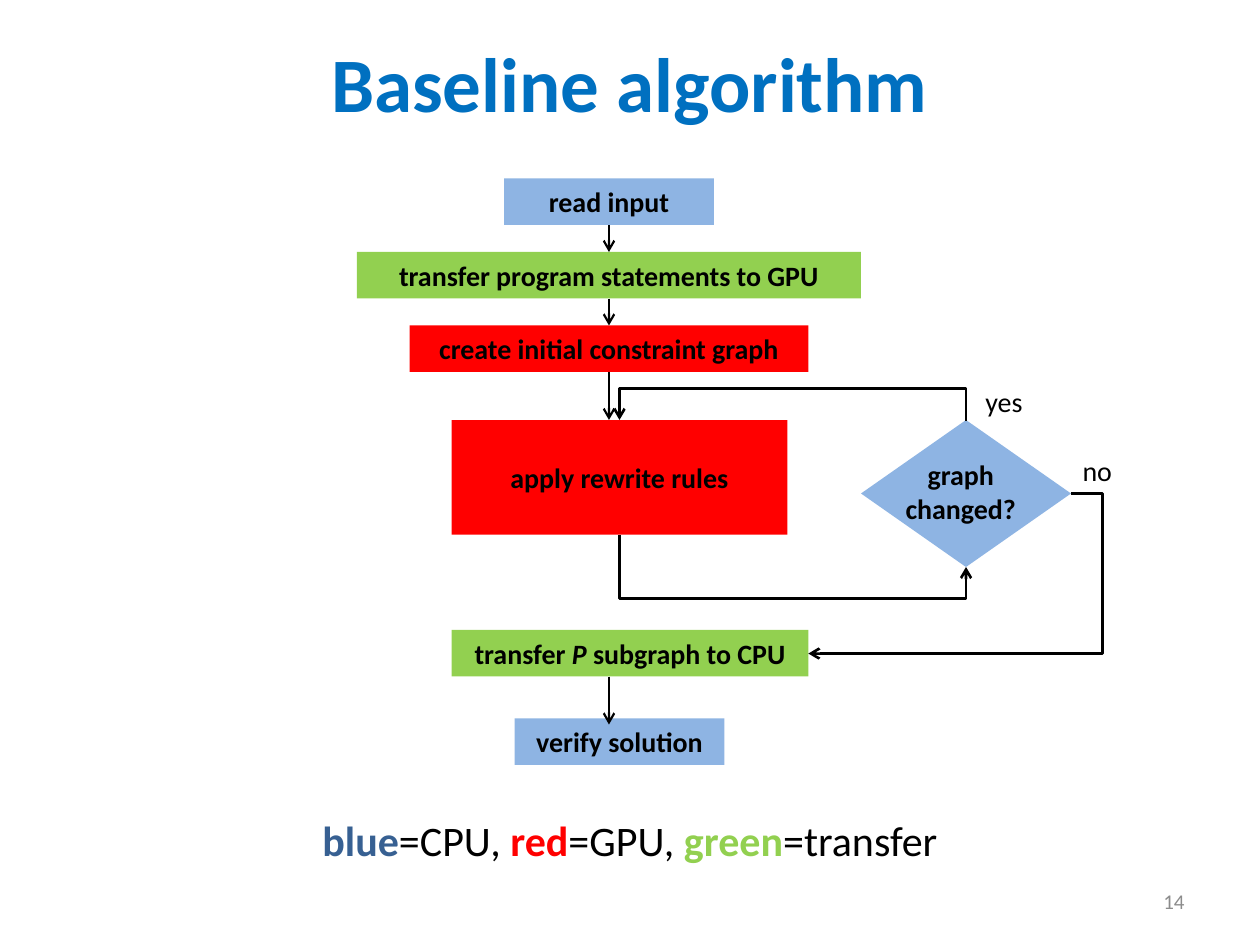
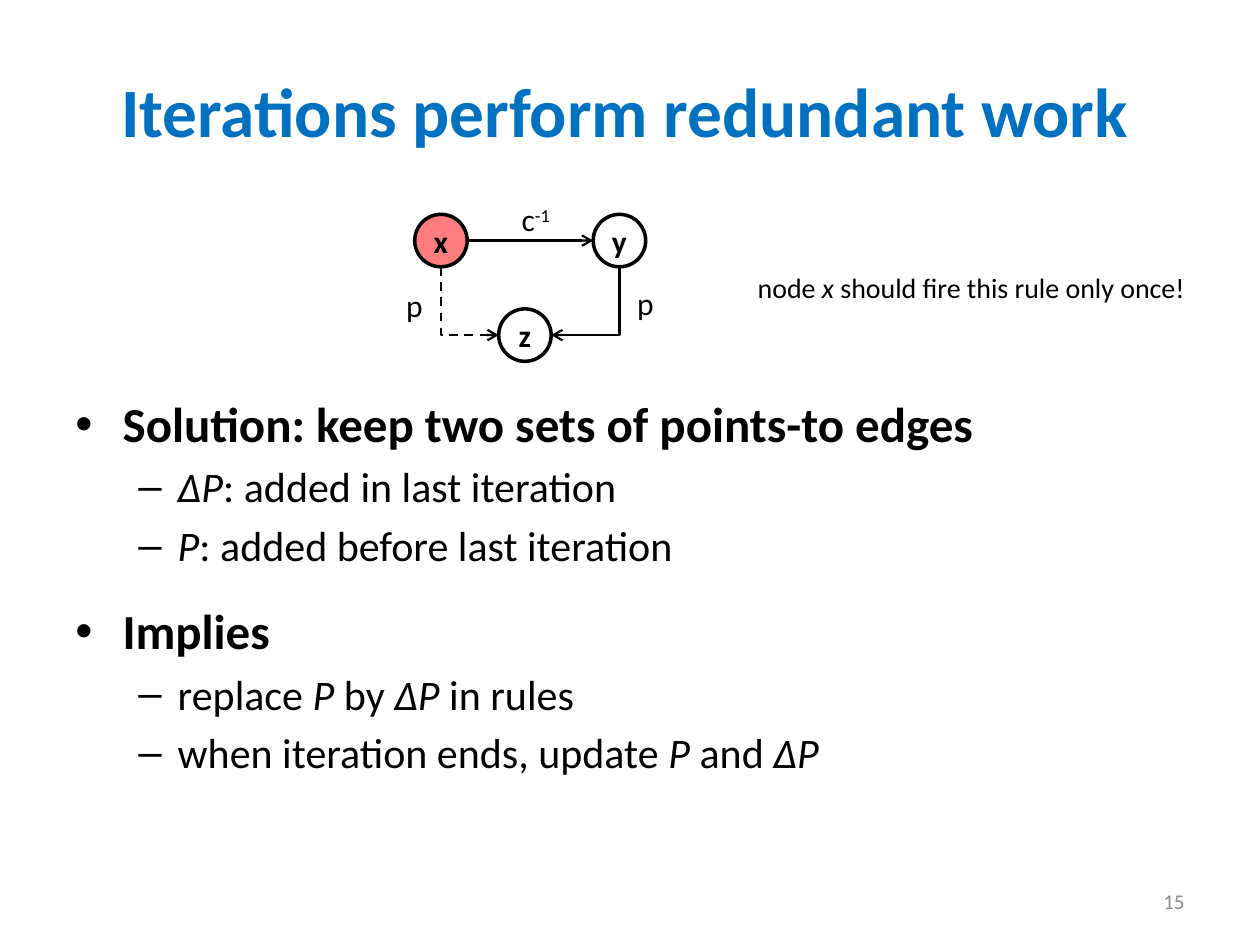
from pptx import Presentation
from pptx.dml.color import RGBColor
from pptx.enum.dml import MSO_LINE
from pptx.enum.shapes import MSO_CONNECTOR, MSO_SHAPE
from pptx.enum.text import MSO_ANCHOR, PP_ALIGN
from pptx.oxml.ns import qn
from pptx.oxml.xmlchemy import OxmlElement
from pptx.util import Pt

BLACK = RGBColor(0x00, 0x00, 0x00)
WHITE = RGBColor(0xFF, 0xFF, 0xFF)
GRAY = RGBColor(0x8C, 0x8C, 0x8C)
TITLE_BLUE = RGBColor(0x00, 0x70, 0xC0)
DARK_BLUE = RGBColor(0x37, 0x60, 0x92)
CPU_BLUE = RGBColor(0x8E, 0xB4, 0xE3)
GPU_RED = RGBColor(0xFF, 0x00, 0x00)
TRANSFER_GREEN = RGBColor(0x92, 0xD0, 0x50)

FONT = "Calibri"
TITLE_ONLY = 5
TOP, LEFT, BOTTOM, RIGHT = range(4)
BOLD = {"bold": True}
ITALIC = {"italic": True}
STEP_HEIGHT = 26.6
NODE_SIZE = 30
HALF_OPAQUE = 51


def add_child(parent, tag, **attributes):
    child = OxmlElement(tag)
    for name, value in attributes.items():
        child.set(name, value)
    parent.append(child)
    return child


class DeckBuilder:
    def __init__(self):
        self.deck = Presentation()
        self.deck.slide_width = Pt(720)
        self.deck.slide_height = Pt(540)
        self.page = None

    def start_page(self, title, number, left, top, size, anchor):
        self.page = self.deck.slides.add_slide(self.deck.slide_layouts[TITLE_ONLY])
        heading = self.page.shapes.title
        place = {"left": left, "top": top, "width": 648, "height": 90}
        for name, value in place.items():
            setattr(heading, name, Pt(value))
        frame = heading.text_frame
        self.set_frame(frame, anchor, margin_top=0, margin_bottom=0)
        self.add_spans(frame.paragraphs[0], [(title, BOLD)], size, TITLE_BLUE, PP_ALIGN.CENTER)
        self.text(516, 500.5, 168, 28.8, [str(number)], 12, GRAY,
                  PP_ALIGN.RIGHT, MSO_ANCHOR.MIDDLE)

    def set_frame(self, frame, anchor, **margins):
        frame.word_wrap = True
        frame.vertical_anchor = anchor
        for name, value in margins.items():
            setattr(frame, name, Pt(value))

    def add_spans(self, para, spans, size, color=BLACK, align=PP_ALIGN.LEFT):
        para.alignment = align
        for item in spans:
            words, changes = (item, {}) if isinstance(item, str) else item
            formats = {"name": FONT, "size": Pt(size), "bold": False, "italic": False, **changes}
            span = para.add_run()
            span.text = words
            span.font.color.rgb = formats.pop("color", color)
            raised = formats.pop("raised", None)
            for name, value in formats.items():
                setattr(span.font, name, value)
            if raised:
                span._r.get_or_add_rPr().set("baseline", str(raised * 1000))

    def text(self, left, top, width, height, spans, size, color=BLACK,
             align=PP_ALIGN.LEFT, anchor=MSO_ANCHOR.TOP):
        box = self.page.shapes.add_textbox(Pt(left), Pt(top), Pt(width), Pt(height))
        self.set_frame(box.text_frame, anchor)
        self.add_spans(box.text_frame.paragraphs[0], spans, size, color, align)
        return box

    def shape(self, kind, left, top, width, height, fill):
        shape = self.page.shapes.add_shape(kind, Pt(left), Pt(top), Pt(width), Pt(height))
        shape.shadow.inherit = False
        shape.fill.solid()
        shape.fill.fore_color.rgb = fill
        shape.line.fill.background()
        return shape

    def step(self, left, top, width, fill, spans, height=STEP_HEIGHT):
        box = self.shape(MSO_SHAPE.RECTANGLE, left, top, width, height, fill)
        self.set_frame(box.text_frame, MSO_ANCHOR.MIDDLE)
        self.add_spans(box.text_frame.paragraphs[0], spans, 16, align=PP_ALIGN.CENTER)
        return box

    def node(self, left, top, label, fill, opacity=100):
        circle = self.shape(MSO_SHAPE.OVAL, left, top, NODE_SIZE, NODE_SIZE, fill)
        circle.line.color.rgb = BLACK
        circle.line.width = Pt(2)
        if opacity < 100:
            color = circle._element.spPr.find(qn("a:solidFill"))[0]
            add_child(color, "a:alpha", val=str(opacity * 1000))
        self.set_frame(circle.text_frame, MSO_ANCHOR.MIDDLE, margin_left=0,
                       margin_right=0, margin_top=0, margin_bottom=0)
        self.add_spans(circle.text_frame.paragraphs[0], [(label, BOLD)], 18,
                       align=PP_ALIGN.CENTER)

    def arrow(self, start, end, width=1.25, kind=MSO_CONNECTOR.STRAIGHT):
        arrow = self.page.shapes.add_connector(kind, *(Pt(value) for value in (*start, *end)))
        arrow.line.color.rgb = BLACK
        arrow.line.width = Pt(width)
        add_child(arrow.line._get_or_add_ln(), "a:tailEnd", type="arrow")
        add_child(arrow._element.spPr, "a:effectLst")
        return arrow

    def elbow(self, start, end, turn=None, vertical=True, width=1.25):
        axis = 1 if vertical else 0
        frame_start, frame_end = start, end
        quarter = 1 if end[1] > start[1] and end[0] < start[0] else -1
        if vertical:
            middle_x, middle_y = ((a + b) / 2 for a, b in zip(start, end))
            frame_start, frame_end = (
                (middle_x + quarter * (y - middle_y), middle_y - quarter * (x - middle_x))
                for x, y in (start, end))
        arrow = self.arrow(frame_start, frame_end, width, MSO_CONNECTOR.ELBOW)
        properties = arrow._element.spPr
        if vertical:
            properties.find(qn("a:xfrm")).set("rot", str(quarter % 4 * 5400000))
        geometry = properties.find(qn("a:prstGeom"))
        if turn is None:
            geometry.set("prst", "bentConnector2")
        else:
            share = (turn - start[axis]) / (end[axis] - start[axis])
            guides = geometry.find(qn("a:avLst"))
            add_child(guides, "a:gd", name="adj1", fmla=f"val {round(share * 100000)}")
        return arrow

    def bullets(self, left, top, width, height, margin_top, entries):
        box = self.page.shapes.add_textbox(Pt(left), Pt(top), Pt(width), Pt(height))
        frame = box.text_frame
        self.set_frame(frame, MSO_ANCHOR.TOP, margin_top=margin_top)
        levels = [(28, 27, 27, "•"), (24, 58.5, 22.5, "–")]
        for index, (level, space_after, spans) in enumerate(entries):
            size, indent, hanging, mark = levels[level]
            para = frame.add_paragraph() if index else frame.paragraphs[0]
            self.add_spans(para, spans, size)
            formats = {"level": level, "space_before": Pt(size / 5), "space_after": Pt(space_after)}
            for name, value in formats.items():
                setattr(para, name, value)
            properties = para._p.get_or_add_pPr()
            properties.set("marL", str(Pt(indent)))
            properties.set("indent", str(-Pt(hanging)))
            add_child(properties, "a:buFont", typeface="Arial")
            add_child(properties, "a:buChar", char=mark)


def build_algorithm_page(builder):
    builder.start_page("Baseline algorithm", 14, 36, 1.5, 44, MSO_ANCHOR.MIDDLE)
    legend = [("blue", {"bold": True, "color": DARK_BLUE}), "=CPU, ",
              ("red", {"bold": True, "color": GPU_RED}), "=GPU, ",
              ("green", {"bold": True, "color": TRANSFER_GREEN}), "=transfer"]
    builder.text(36, 462, 648, 37.5, legend, 24, align=PP_ALIGN.CENTER)

    read = builder.step(288, 102, 120, CPU_BLUE, [("read input", BOLD)])
    send = builder.step(204, 144, 288, TRANSFER_GREEN,
                        [("transfer program statements to GPU", BOLD)])
    create = builder.step(234, 186, 228, GPU_RED, [("create initial constraint graph", BOLD)])
    builder.step(258, 240, 192, GPU_RED, [("apply rewrite rules", BOLD)], 65.5)
    builder.step(258, 360, 204, TRANSFER_GREEN,
                 [("transfer ", BOLD), ("P ", {**BOLD, **ITALIC}), ("subgraph to CPU", BOLD)])
    builder.step(294, 410.5, 120, CPU_BLUE, [("verify solution", BOLD)])
    builder.shape(MSO_SHAPE.FLOWCHART_DECISION, 492, 240, 120, 84, CPU_BLUE)
    builder.text(510, 258, 78, 46, [("graph changed?", BOLD)], 16, align=PP_ALIGN.CENTER)

    for upper, lower in ((read, send), (send, create)):
        arrow = builder.arrow((348, upper.top.pt + STEP_HEIGHT), (348, lower.top.pt))
        arrow.begin_connect(upper, BOTTOM)
        arrow.end_connect(lower, TOP)
    builder.arrow((348, 212.6), (348, 240)).begin_connect(create, BOTTOM)
    builder.arrow((348, 386.6), (348, 414))

    builder.elbow((354, 305.5), (552, 324), turn=342, width=1.5)
    builder.elbow((612, 282), (462, 373.5), turn=630, vertical=False, width=1.5)
    builder.elbow((552, 240.5), (354, 240), turn=222.5, width=1.5)
    builder.text(611.5, 255.5, 48, 26.6, ["no"], 16)
    builder.text(556, 216, 48, 26.6, ["yes"], 16)


def build_redundancy_page(builder):
    builder.start_page("Iterations perform redundant work", 15, 33, 39, 39.6, MSO_ANCHOR.TOP)
    delta = ("∆P", ITALIC)
    edges = ("P", ITALIC)
    builder.bullets(36, 102, 648, 380, 123, [
        (0, 0, [("Solution: keep two sets of points-to edges", BOLD)]),
        (1, 0, [delta, ": added in last iteration"]),
        (1, 12, [edges, ": added before last iteration"]),
        (0, 0, [("Implies", BOLD)]),
        (1, 0, ["replace ", edges, " by ", delta, " in rules"]),
        (1, 0, ["when iteration ends, update ", edges, " and ", delta]),
    ])

    builder.node(237, 122.5, "x", GPU_RED, HALF_OPAQUE)
    builder.node(339, 122.5, "y", WHITE, HALF_OPAQUE)
    builder.node(285, 176.5, "z", WHITE)
    builder.arrow((267, 137.5), (339, 137.5))
    builder.elbow((354, 152.5), (315, 191.5))
    builder.elbow((252, 152.5), (285, 191.5)).line.dash_style = MSO_LINE.DASH

    builder.text(291, 111, 36, 29, ["c", ("-1", {"raised": 30})], 18)
    builder.text(357, 158.5, 30, 29, ["p"], 18)
    builder.text(225, 160, 30, 29, ["p"], 18)
    builder.text(402, 151, 306, 26.6, ["node ", ("x", ITALIC), " should fire this rule only once!"],
                 16, align=PP_ALIGN.CENTER)


def main():
    builder = DeckBuilder()
    build_algorithm_page(builder)
    build_redundancy_page(builder)
    builder.deck.save("out.pptx")


if __name__ == "__main__":
    main()
